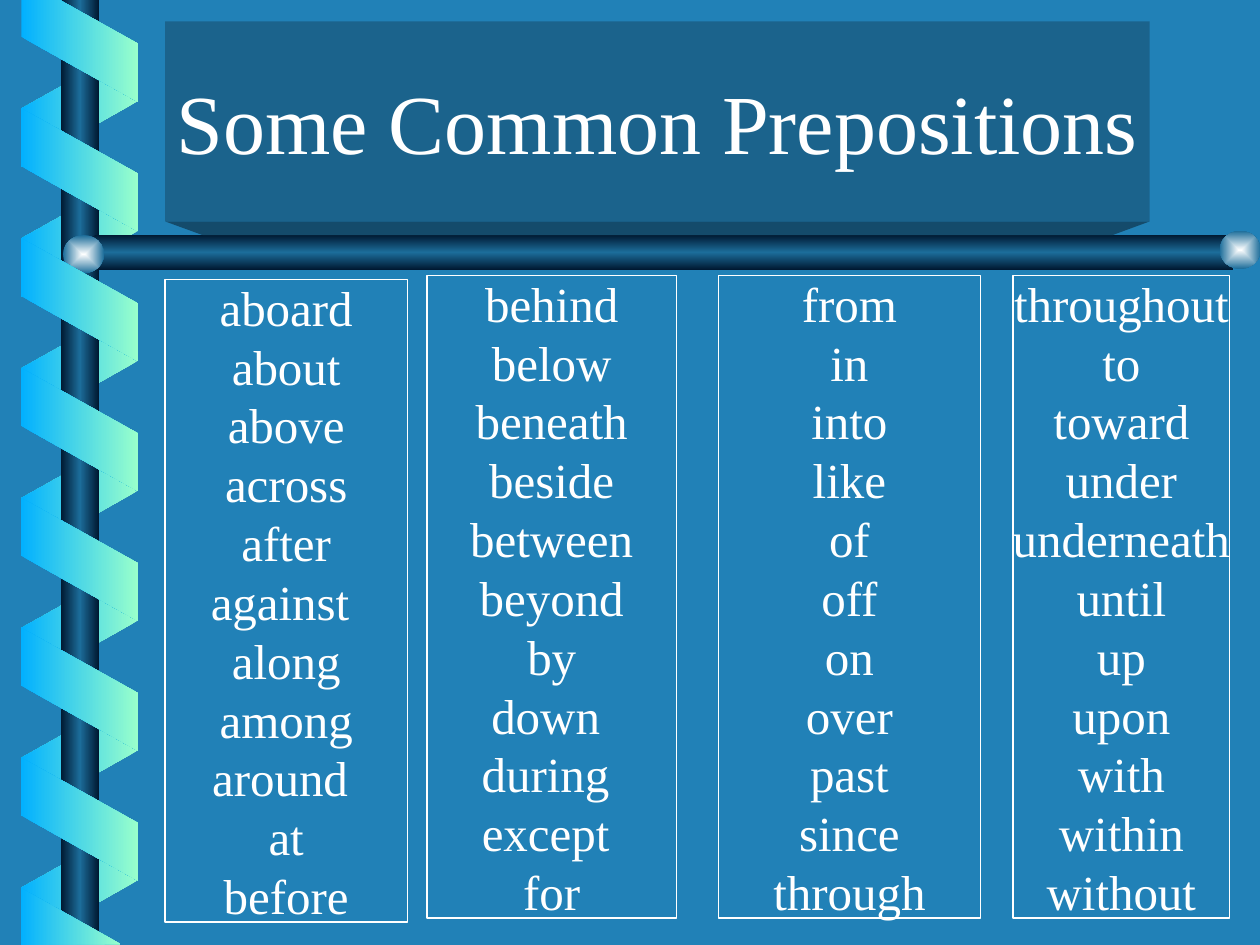
from lxml.etree import SubElement
from pptx import Presentation
from pptx.dml.color import RGBColor
from pptx.enum.shapes import MSO_SHAPE as SHAPE
from pptx.enum.text import MSO_ANCHOR, PP_ALIGN
from pptx.oxml.ns import qn
from pptx.util import Pt

BLUE = RGBColor(0x21, 0x81, 0xB7)
PANEL = RGBColor(0x1B, 0x63, 0x8C)
PANEL_EDGE = RGBColor(0x14, 0x4B, 0x6B)
WHITE = RGBColor(0xFF, 0xFF, 0xFF)
SKY = RGBColor(0x01, 0xB0, 0xFF)
MINT = RGBColor(0x99, 0xFF, 0xCC)
NAVY = RGBColor(0x00, 0x19, 0x32)
STEEL = RGBColor(0x1C, 0x6D, 0x9A)
GLINT = RGBColor(0xFE, 0xFF, 0xFF)

FONT = "Times New Roman"
RIBBON = (SKY, MINT)
TUBE = (NAVY, STEEL, NAVY)
TURN = 74.2  # height of one turn of the spiral

COLUMNS = [  # left, top, width, words
    (94.3, 159.8, 138.5, ["aboard", "about", "above", "across", "after", "against ",
                          "along", "among", "around ", "at", "before"]),
    (244, 157.5, 142.5, ["behind", "below", "beneath", "beside", "between", "beyond",
                         "by", "down ", "during ", "except ", "for"]),
    (410.4, 157.5, 150, ["from", "in", "into", "like", "of", "off",
                         "on", "over", "past", "since", "through"]),
    (578.8, 157.5, 124, ["throughout", "to", "toward", "under", "underneath", "until",
                         "up", "upon", "with", "within", "without"]),
]


def fill_gradient(s, colors, angle=0, radial=False):
    """Spread the colours evenly, along an angle or out from the centre."""
    s.fill.gradient()
    grad = s.fill._fill._gradFill
    for child in list(grad):
        grad.remove(child)
    grad.set("rotWithShape", "0")
    stops = SubElement(grad, qn("a:gsLst"))
    for i, color in enumerate(colors):
        stop = SubElement(stops, qn("a:gs"), pos=str(100000 * i // (len(colors) - 1)))
        SubElement(stop, qn("a:srgbClr"), val=str(color))
    if radial:
        center = SubElement(grad, qn("a:path"), {"path": "shape"})
        SubElement(center, qn("a:fillToRect"), l="50000", t="50000", r="50000", b="50000")
    else:
        SubElement(grad, qn("a:lin"), ang=str(angle * 60000), scaled="1")


def add_plain_shape(slide, kind, left, top, width, height):
    s = slide.shapes.add_shape(kind, Pt(left), Pt(top), Pt(width), Pt(height))
    s.shadow.inherit = False
    s.line.fill.background()
    return s


def flip(s):
    s._element.spPr.xfrm.set("flipH", "1")


def add_outline(slide, points):
    builder = slide.shapes.build_freeform(Pt(points[0][0]), Pt(points[0][1]))
    builder.add_line_segments([(Pt(x), Pt(y)) for x, y in points[1:]], close=True)
    s = builder.convert_to_shape()
    s.shadow.inherit = False
    s.line.fill.background()
    return s


def add_ribbons(slide, first_top, count, behind):
    for i in range(count):
        s = add_plain_shape(slide, SHAPE.PARALLELOGRAM, 10.1, first_top + i * TURN, 70.5, 67)
        s.adjustments[0] = 0.56
        s.rotation = 90 if behind else 270
        if behind:
            flip(s)
        fill_gradient(s, RIBBON[::-1] if behind else RIBBON)


def add_rods(slide):
    pole = add_plain_shape(slide, SHAPE.RECTANGLE, 34.9, 0, 21.6, 540)
    fill_gradient(pole, TUBE)
    bar = add_plain_shape(slide, SHAPE.PENTAGON, 43.2, 134.2, 661.5, 20)
    bar.adjustments[0] = 0.58
    flip(bar)
    fill_gradient(bar, TUBE, angle=90)
    for left, top in ((36.1, 134.4), (697, 131.9)):
        knob = add_plain_shape(slide, SHAPE.OVAL, left, top, 23.4, 21.8)
        fill_gradient(knob, (GLINT, STEEL), radial=True)


def add_ribbon_ends(slide):
    upper = [(12.2, 0), (12.2, 21), (78.8, 58.2), (78.8, 25), (34.2, 0)]
    lower = [(68.8, 539.5), (12, 507.5), (11.8, 540)]
    for points in (upper, lower):
        fill_gradient(add_outline(slide, points), RIBBON)


def add_text_panel(slide, left, top, width, height, lines, size, color):
    s = add_plain_shape(slide, SHAPE.RECTANGLE, left, top, width, height)
    s.fill.solid()
    s.fill.fore_color.rgb = color
    tf = s.text_frame
    tf.word_wrap = False
    tf.vertical_anchor = MSO_ANCHOR.MIDDLE
    tf.text = "\n".join(lines)
    for p in tf.paragraphs:
        p.alignment = PP_ALIGN.CENTER
        for r in p.runs:
            r.font.name = FONT
            r.font.size = Pt(size)
            r.font.color.rgb = WHITE
    return s


def add_title(slide):
    edge = add_outline(slide, [(94.3, 126.5), (657, 126.5), (635.5, 134.4), (116, 134.4)])
    edge.fill.solid()
    edge.fill.fore_color.rgb = PANEL_EDGE
    add_text_panel(slide, 94.3, 12.2, 562.7, 114.3, ["Some Common Prepositions"], 48, PANEL)


def add_word_columns(slide):
    for left, top, width, words in COLUMNS:
        s = add_text_panel(slide, left, top, width, 367.2, words, 28, BLUE)
        s.line.color.rgb = WHITE
        s.line.width = Pt(0.75)


def main():
    prs = Presentation()
    prs.slide_width, prs.slide_height = Pt(720), Pt(540)
    slide = prs.slides.add_slide(prs.slide_layouts[6])
    slide.background.fill.solid()
    slide.background.fill.fore_color.rgb = BLUE
    add_ribbons(slide, 26.5, 7, behind=True)
    add_rods(slide)
    add_ribbons(slide, 63.5, 6, behind=False)
    add_ribbon_ends(slide)
    add_title(slide)
    add_word_columns(slide)
    prs.save("out.pptx")


if __name__ == "__main__":
    main()
